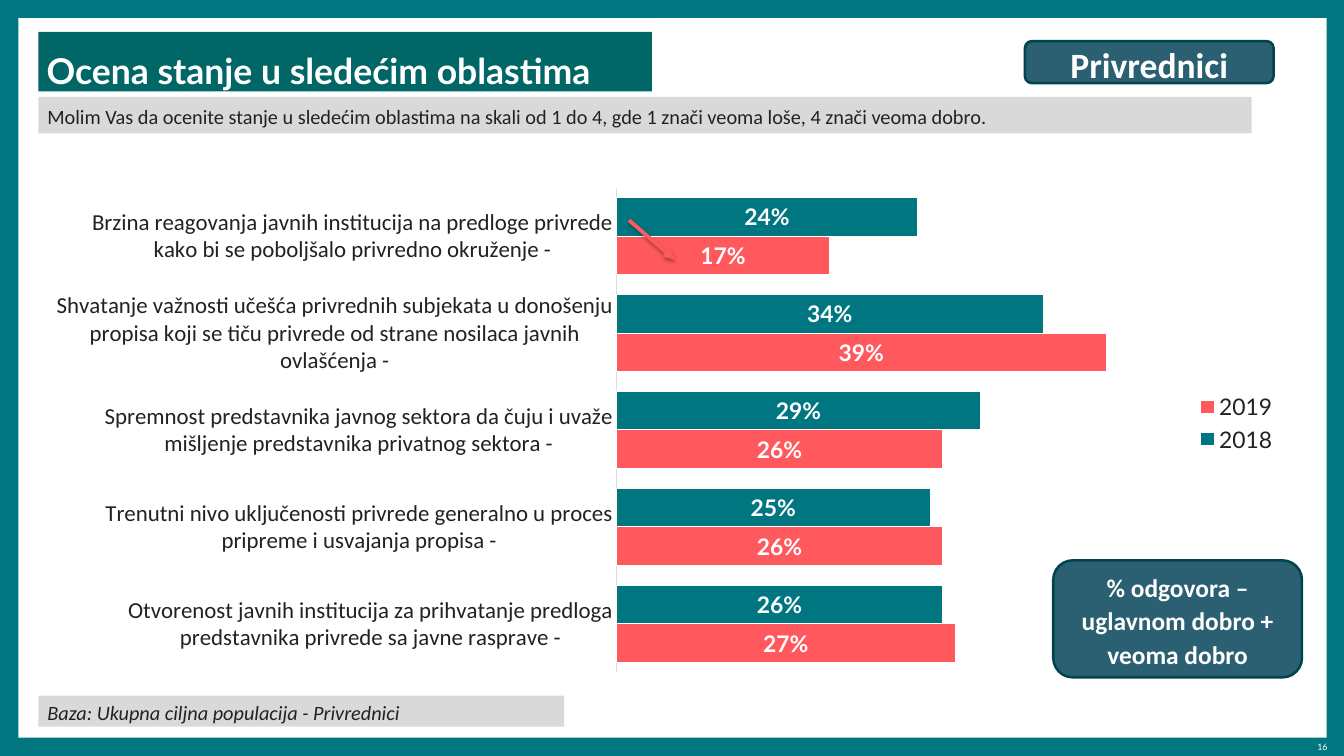
import pptx
import pptx.util
import pptx.dml.color
import pptx.chart.data
import pptx.enum.chart
import pptx.enum.shapes
import pptx.enum.text
import pptx.oxml
import pptx.oxml.ns

Inches = pptx.util.Inches
Pt = pptx.util.Pt
Kind = pptx.enum.shapes.MSO_SHAPE
Align = pptx.enum.text.PP_ALIGN
teal, coral, white, ink, grey = "007681", "FF585D", "FFFFFF", "222223", "D9D9D9"


def color(code):
    return pptx.dml.color.RGBColor.from_string(code)


def write(shape, text, size, font="Calibri", ink=white, bold=False, italic=False,
          align=Align.LEFT, gap=1.1, pad=(0.1, 0, 0.1, 0), wrap=True):
    frame = shape.text_frame
    frame.auto_size = pptx.enum.text.MSO_AUTO_SIZE.NONE
    frame.word_wrap = wrap
    frame.vertical_anchor = pptx.enum.text.MSO_ANCHOR.MIDDLE
    frame.margin_left, frame.margin_top, frame.margin_right, frame.margin_bottom = map(Inches, pad)
    para = frame.paragraphs[0]
    para.alignment = align
    para.line_spacing = gap
    run = para.add_run()
    run.text = text
    run.font.name = font
    run.font.size = Pt(size)
    run.font.bold = bold
    run.font.italic = italic
    run.font.color.rgb = color(ink)


deck = pptx.Presentation()
deck.slide_width = Inches(14.7)
deck.slide_height = Inches(8.27)
slide = deck.slides.add_slide(deck.slide_layouts[5])
slide.background.fill.solid()
slide.background.fill.fore_color.rgb = color(teal)
shapes = slide.shapes

panel = shapes.add_shape(Kind.RECTANGLE, Inches(0.2), Inches(0.2), Inches(14.31), Inches(7.87))
panel.shadow.inherit = False
panel.fill.solid()
panel.fill.fore_color.rgb = color(white)
panel.line.fill.background()

number = shapes.add_textbox(Inches(13.73), Inches(8.1), Inches(0.79), Inches(0.13))
write(number, "16", 7, font="Lato", align=Align.RIGHT, pad=(0, 0, 0, 0))

data = pptx.chart.data.CategoryChartData(number_format='#"%"')
data.categories = [
    "Brzina reagovanja javnih institucija na predloge privrede kako bi se poboljšalo privredno okruženje -",
    "Shvatanje važnosti učešća privrednih subjekata u donošenju propisa koji se tiču privrede od strane nosilaca javnih ovlašćenja -",
    "Spremnost predstavnika javnog sektora da čuju i uvaže mišljenje predstavnika privatnog sektora -",
    "Trenutni nivo uključenosti privrede generalno u proces pripreme i usvajanja propisa -",
    "Otvorenost javnih institucija za prihvatanje predloga predstavnika privrede sa javne rasprave -",
]
data.add_series("2018", (24, 34, 29, 25, 26))
data.add_series("2019", (17, 39, 26, 26, 27))
chart = shapes.add_chart(
    pptx.enum.chart.XL_CHART_TYPE.BAR_CLUSTERED,
    Inches(0.62), Inches(1.9), Inches(13.46), Inches(5.46), data).chart
chart.has_title = False
chart.font.name = "Lato"
chart.font.size = Pt(10)
chart.font.color.rgb = color(ink)

chart.has_legend = True
legend = chart.legend
legend.position = pptx.enum.chart.XL_LEGEND_POSITION.RIGHT
legend.include_in_layout = False
legend.font.name = "Lato"
legend.font.size = Pt(18)
legend.font.color.rgb = color(ink)

cats = chart.category_axis
cats.reverse_order = True
cats.major_tick_mark = pptx.enum.chart.XL_TICK_MARK.NONE
cats.tick_labels.font.name = "Calibri"
cats.tick_labels.font.size = Pt(18)
cats.tick_labels.font.color.rgb = color(ink)
cats.format.line.color.rgb = color("DDDDDE")
cats.format.line.width = Pt(0.75)
scale = chart.value_axis
scale.minimum_scale = 0
scale.maximum_scale = 45
scale.has_major_gridlines = False
scale.visible = False

plot = chart.plots[0]
plot.gap_width = 50
plot.overlap = 0
plot.vary_by_categories = False
for series, tint in zip(plot.series, (teal, coral)):
    series.format.fill.solid()
    series.format.fill.fore_color.rgb = color(tint)
    series.format.line.color.rgb = color(white)
    series.format.line.width = Pt(0.75)
    labels = series.data_labels
    labels.show_value = True
    labels.number_format = '#"%"'
    labels.number_format_is_linked = False
    labels.position = pptx.enum.chart.XL_LABEL_POSITION.CENTER
    labels.font.name = "Lato"
    labels.font.size = Pt(18)
    labels.font.bold = True
    labels.font.color.rgb = color(white)

area = chart.plots[0]._element.getparent()
for old in area.findall(pptx.oxml.ns.qn("c:layout")):
    area.remove(old)
area.insert(0, pptx.oxml.parse_xml(
    f'<c:layout {pptx.oxml.ns.nsdecls("c")}><c:manualLayout><c:layoutTarget val="inner"/>'
    '<c:xMode val="edge"/><c:yMode val="edge"/><c:x val="0.454"/><c:y val="0.028"/>'
    '<c:w val="0.46"/><c:h val="0.972"/></c:manualLayout></c:layout>'))

title = shapes.title
title.left, title.top, title.width, title.height = map(Inches, (0.42, 0.35, 6.71, 0.65))
title.fill.solid()
title.fill.fore_color.rgb = color("006666")
write(title, "Ocena stanje u sledećim oblastima", 28, font="Lato", bold=True,
      gap=Pt(41), pad=(0.09, 0.08, 0.09, 0), wrap=False)
shapes._spTree.append(title._element)

strips = [
    ((0.42, 1.06, 13.27, 0.4), False,
     "Molim Vas da ocenite stanje u sledećim oblastima na skali od 1 do 4, gde 1 znači veoma loše, 4 znači veoma dobro."),
    ((0.42, 7.61, 5.75, 0.34), True, "Baza: Ukupna ciljna populacija - Privrednici"),
]
for place, slant, text in strips:
    strip = shapes.add_shape(Kind.RECTANGLE, *map(Inches, place))
    strip.shadow.inherit = False
    strip.fill.solid()
    strip.fill.fore_color.rgb = color(grey)
    strip.line.fill.background()
    write(strip, text, 16, ink=ink, italic=slant)

badges = [
    ((11.21, 0.45, 2.72, 0.46), 28, "Privrednici"),
    ((11.52, 6.13, 2.72, 1.28), 20, "% odgovora – uglavnom dobro + veoma dobro"),
]
for place, size, text in badges:
    badge = shapes.add_shape(Kind.ROUNDED_RECTANGLE, *map(Inches, place))
    badge.shadow.inherit = False
    badge.fill.solid()
    badge.fill.fore_color.rgb = color("2B5F72")
    badge.line.color.rgb = color("00454C")
    badge.line.width = Pt(2)
    write(badge, text, size, bold=True, align=Align.CENTER, pad=(0.04,) * 4)

arrow = shapes.add_connector(
    pptx.enum.shapes.MSO_CONNECTOR.STRAIGHT,
    Inches(6.88), Inches(2.41), Inches(7.38), Inches(2.84))
arrow.line.color.rgb = color(coral)
arrow.line.width = Pt(3)
space = pptx.oxml.ns.nsdecls("a")
arrow.line._get_or_add_ln().append(pptx.oxml.parse_xml(f'<a:tailEnd {space} type="triangle"/>'))
arrow._element.spPr.append(pptx.oxml.parse_xml(
    f'<a:effectLst {space}><a:outerShdw blurRad="{Pt(3.1)}" dist="{Pt(1.8)}" dir="5400000" rotWithShape="0">'
    '<a:srgbClr val="000000"><a:alpha val="35000"/></a:srgbClr></a:outerShdw></a:effectLst>'))

deck.save("out.pptx")
